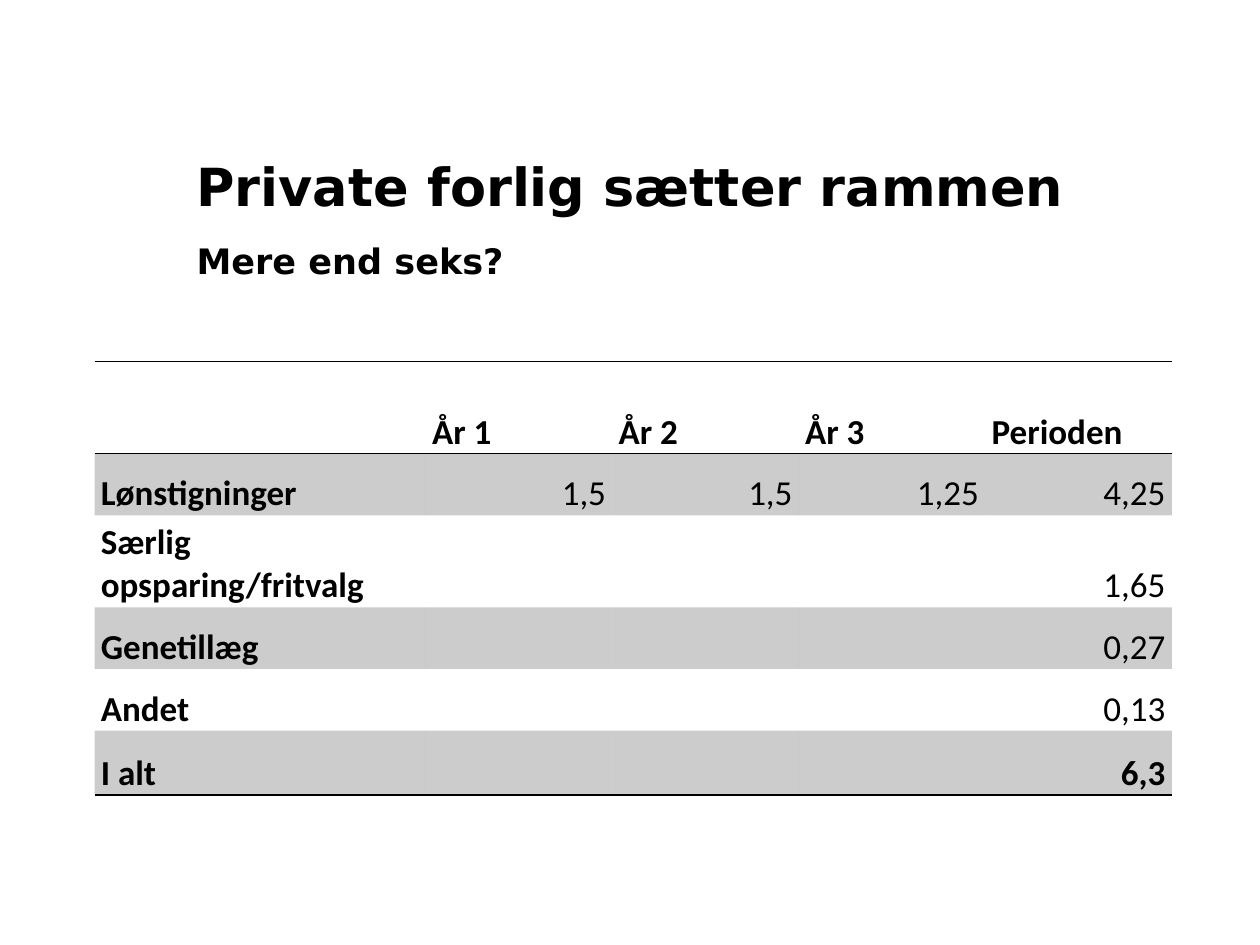
import pptx
import pptx.dml.color
import pptx.enum.text
import pptx.oxml
import pptx.oxml.ns
import pptx.util
from pptx.util import Inches

BLACK = pptx.dml.color.RGBColor(0, 0, 0)
PLAIN_STYLE = "{2D5ABB26-0587-4C30-8999-92F81FD0307C}"
HEADINGS = [
    ("Private forlig sætter rammen", 1.28, 0.43, 30),
    ("Mere end seks?", 1.94, 0.38, 20),
]
ROWS = [
    ["", "År 1", "År 2", "År 3", "Perioden"],
    ["Lønstigninger", "1,5", "1,5", "1,25", "4,25"],
    ["Særlig opsparing/fritvalg", "", "", "", "1,65"],
    ["Genetillæg", "", "", "", "0,27"],
    ["Andet", "", "", "", "0,13"],
    ["I alt", "", "", "", "6,3"],
]
COLUMN_WIDTHS = [2.63] + [1.48] * 4
ROW_HEIGHTS = [0.73, 0.49, 0.73, 0.49, 0.49, 0.51]


def style_font(paragraph, name, size, bold):
    paragraph.font.name = name
    paragraph.font.size = pptx.util.Pt(size)
    paragraph.font.bold = bold
    paragraph.font.color.rgb = BLACK


def add_heading(page, text, top, height, size):
    box = page.shapes.add_textbox(Inches(1.56), Inches(top), Inches(7.75), Inches(height))
    frame = box.text_frame
    frame.word_wrap = True
    frame.margin_left = frame.margin_right = frame.margin_top = frame.margin_bottom = 0
    para = frame.paragraphs[0]
    para.text = text
    para.line_spacing = 0.9
    style_font(para, "DejaVu Sans", size, True)


def shade(cell):
    cell.fill.solid()
    cell.fill.fore_color.rgb = BLACK
    color = cell._tc.tcPr.find(".//" + pptx.oxml.ns.qn("a:srgbClr"))
    color.append(pptx.oxml.parse_xml(
        f'<a:alpha {pptx.oxml.ns.nsdecls("a")} val="20000"/>'))


def add_borders(cell, sides):
    for index, side in enumerate(sides):
        cell._tc.get_or_add_tcPr().insert(index, pptx.oxml.parse_xml(
            f'<a:ln{side} {pptx.oxml.ns.nsdecls("a")} w="12700"><a:solidFill>'
            f'<a:srgbClr val="{BLACK}"/></a:solidFill></a:ln{side}>'))


def add_wage_table(page):
    frame = page.shapes.add_table(
        len(ROWS), len(COLUMN_WIDTHS), Inches(0.75), Inches(2.87),
        Inches(sum(COLUMN_WIDTHS)), Inches(sum(ROW_HEIGHTS)))
    table = frame.table
    table.first_row = table.horz_banding = False
    table._tbl.tblPr.find(pptx.oxml.ns.qn("a:tableStyleId")).text = PLAIN_STYLE
    for column, width in zip(table.columns, COLUMN_WIDTHS):
        column.width = Inches(width)
    last = len(ROWS) - 1
    for r, (values, height) in enumerate(zip(ROWS, ROW_HEIGHTS)):
        table.rows[r].height = Inches(height)
        for c, value in enumerate(values):
            cell = table.cell(r, c)
            cell.margin_left = cell.margin_right = Inches(0.05)
            cell.margin_top = cell.margin_bottom = 0
            cell.vertical_anchor = pptx.enum.text.MSO_ANCHOR.BOTTOM
            para = cell.text_frame.paragraphs[0]
            para.text = value
            style_font(para, "Calibri", 20, r in (0, last) or c == 0)
            if r > 0 and c > 0:
                para.alignment = pptx.enum.text.PP_ALIGN.RIGHT
            if r % 2:
                shade(cell)
            else:
                cell.fill.background()
            add_borders(cell, {0: "TB", last: "B"}.get(r, ""))


def main():
    deck = pptx.Presentation()
    deck.slide_width, deck.slide_height = Inches(10), Inches(7.5)
    page = deck.slides.add_slide(deck.slide_layouts[6])
    for heading in HEADINGS:
        add_heading(page, *heading)
    add_wage_table(page)
    deck.save("out.pptx")


if __name__ == "__main__":
    main()
